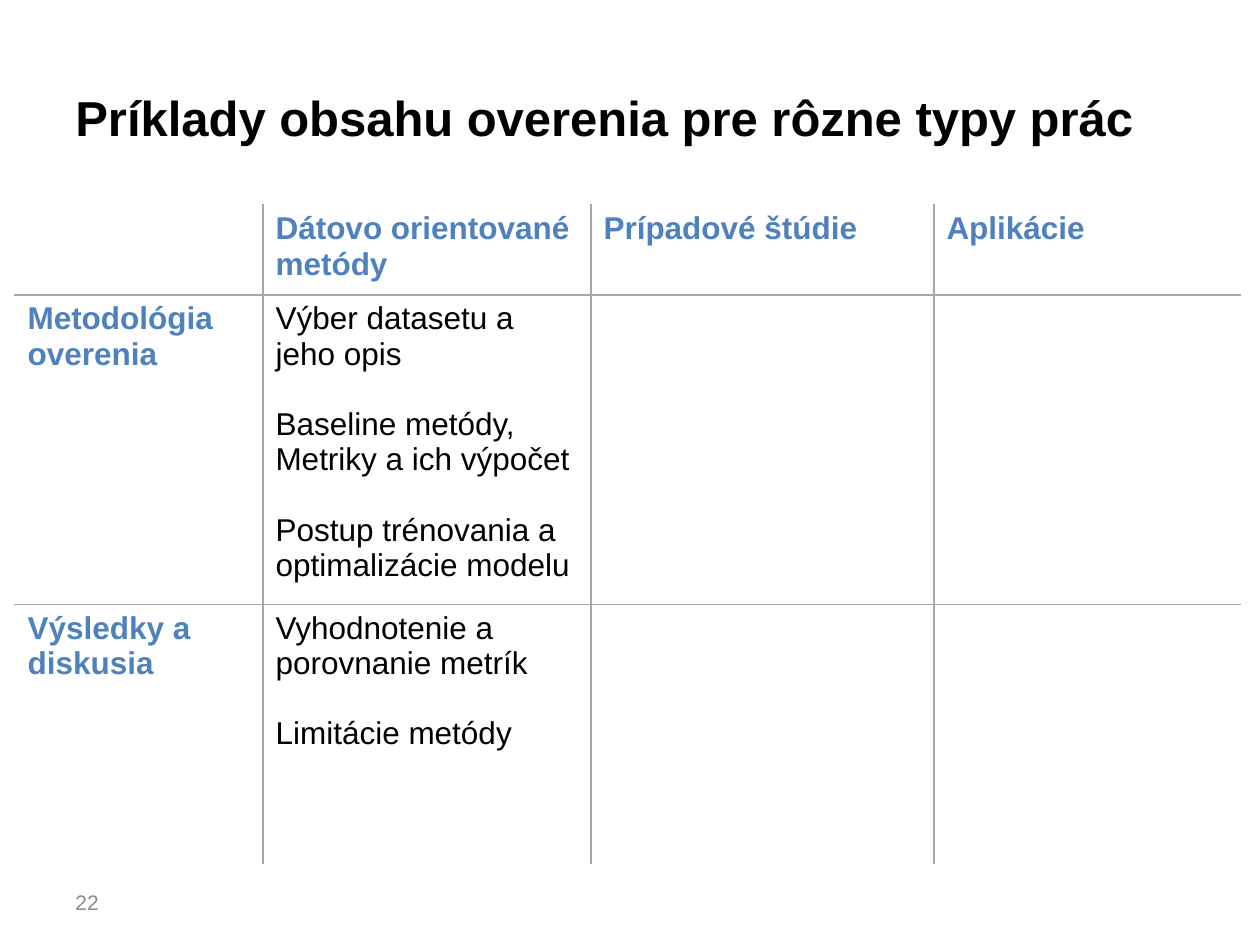
"""Build a slide comparing how different kinds of theses are evaluated."""
import pptx
import pptx.dml.color
import pptx.enum.text
import pptx.oxml
import pptx.oxml.ns
import pptx.util

TITLE = "Príklady obsahu overenia pre rôzne typy prác"
NUMBER = "22"
ROWS = [
    [[], ["Dátovo orientované metódy"], ["Prípadové štúdie"], ["Aplikácie"]],
    [["Metodológia overenia"],
     ["Výber datasetu a jeho opis",
      "Baseline metódy, Metriky a ich výpočet",
      "Postup trénovania a optimalizácie modelu"], [], []],
    [["Výsledky a diskusia"],
     ["Vyhodnotenie a porovnanie metrík", "Limitácie metódy"], [], []],
]
WIDTHS = [248, 328, 343, 306]
HEIGHTS = [90, 295, 260]
THEME = {
    "font": "Arial", "ink": "000000", "head": "4F81BD", "mute": "8C8C8C",
    "rule": "A6A6A6", "title": 28, "body": 18, "small": 12, "gap": 20,
}


def px(count):
    return round(count * 914400 / 126)


def style(para, size, color, bold=False):
    font = para.font
    font.name = THEME["font"]
    font.size = pptx.util.Pt(THEME[size])
    font.bold = bold
    font.color.rgb = pptx.dml.color.RGBColor.from_string(THEME[color])


def label(slide, text, box, size, color, bold=False):
    frame = slide.shapes.add_textbox(*map(px, box)).text_frame
    frame.word_wrap = True
    frame.vertical_anchor = pptx.enum.text.MSO_ANCHOR.MIDDLE
    frame.text = text
    style(frame.paragraphs[0], size, color, bold)


def border(cell, sides):
    props = cell._tc.get_or_add_tcPr()
    for side in sides:
        props.append(pptx.oxml.parse_xml(
            f'<a:ln{side} {pptx.oxml.ns.nsdecls("a")} w="12700"><a:solidFill>'
            f'<a:srgbClr val="{THEME["rule"]}"/></a:solidFill></a:ln{side}>'))


def fill(cell, items, head):
    frame = cell.text_frame
    frame.text = "\n".join(items)
    for spot, para in enumerate(frame.paragraphs):
        style(para, "body", "head" if head else "ink", head)
        if spot:
            para.space_before = pptx.util.Pt(THEME["gap"])


def grid(slide):
    box = map(px, (15, 205, sum(WIDTHS), sum(HEIGHTS)))
    table = slide.shapes.add_table(len(ROWS), len(WIDTHS), *box).table
    table.first_row = table.horz_banding = False
    for col, width in zip(table.columns, WIDTHS):
        col.width = px(width)
    for row, height in zip(table.rows, HEIGHTS):
        row.height = px(height)
    for y, row in enumerate(ROWS):
        for x, items in enumerate(row):
            cell = table.cell(y, x)
            inner = {"L": x > 0, "R": x < len(WIDTHS) - 1,
                     "T": y > 0, "B": y < len(ROWS) - 1}
            border(cell, [side for side, shown in inner.items() if shown])
            cell.fill.background()
            fill(cell, items, x == 0 or y == 0)


def main():
    deck = pptx.Presentation()
    deck.slide_width, deck.slide_height = px(1260), px(945)
    slide = deck.slides.add_slide(deck.slide_layouts[6])
    label(slide, TITLE, (63, 38, 1134, 158), "title", "ink", True)
    grid(slide)
    label(slide, NUMBER, (63, 877, 294, 50), "small", "mute")
    deck.save("out.pptx")


if __name__ == "__main__":
    main()
